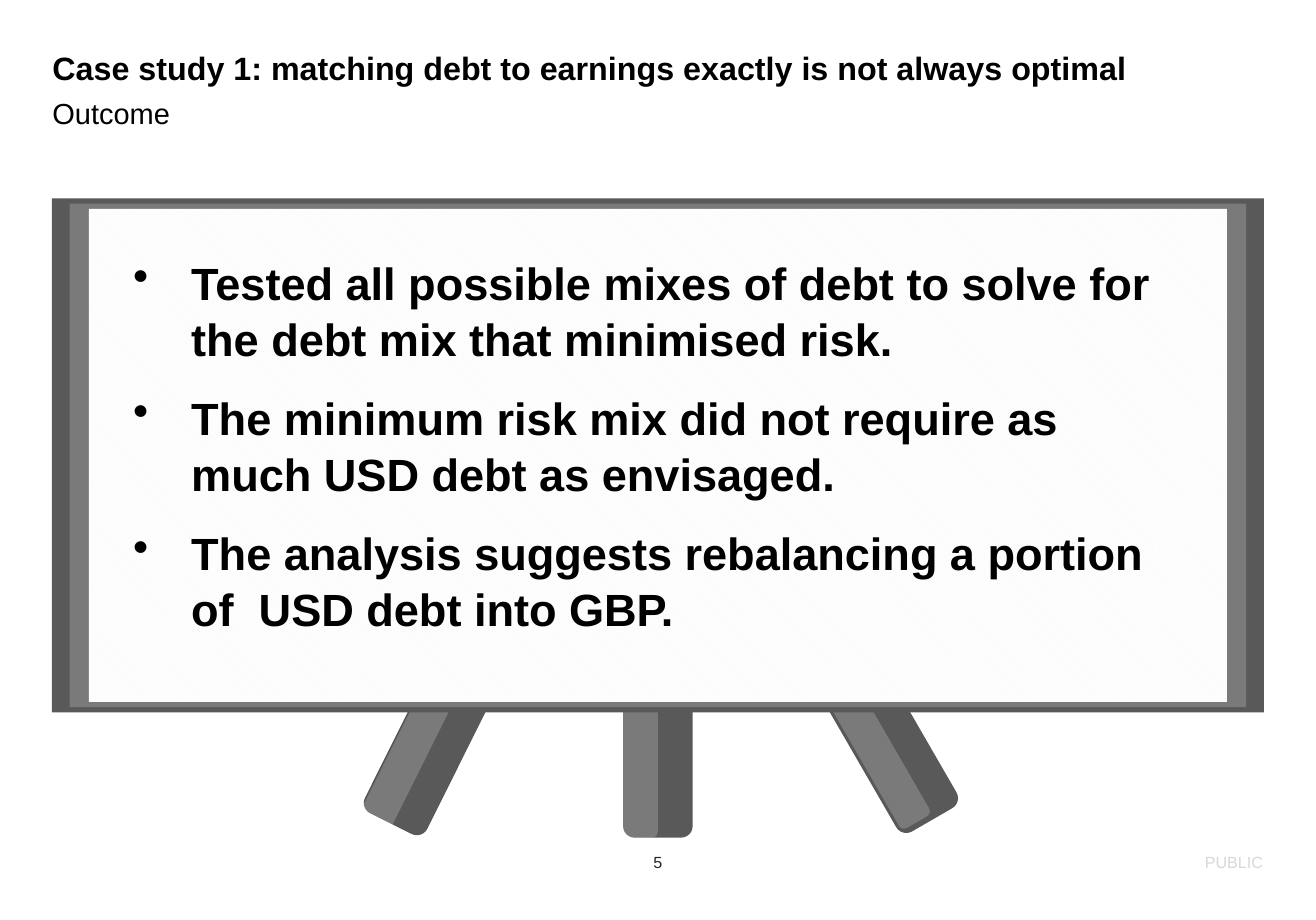
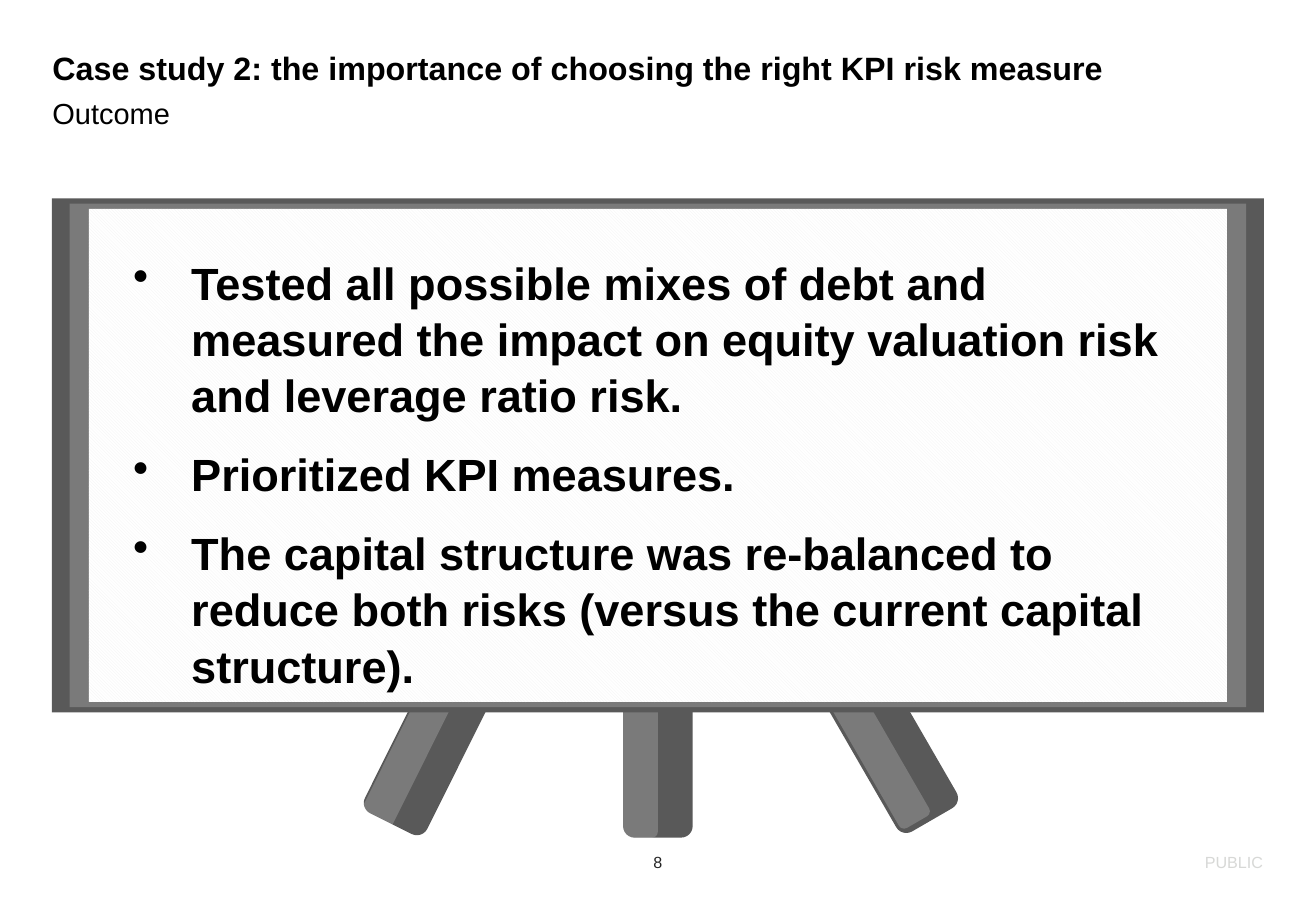
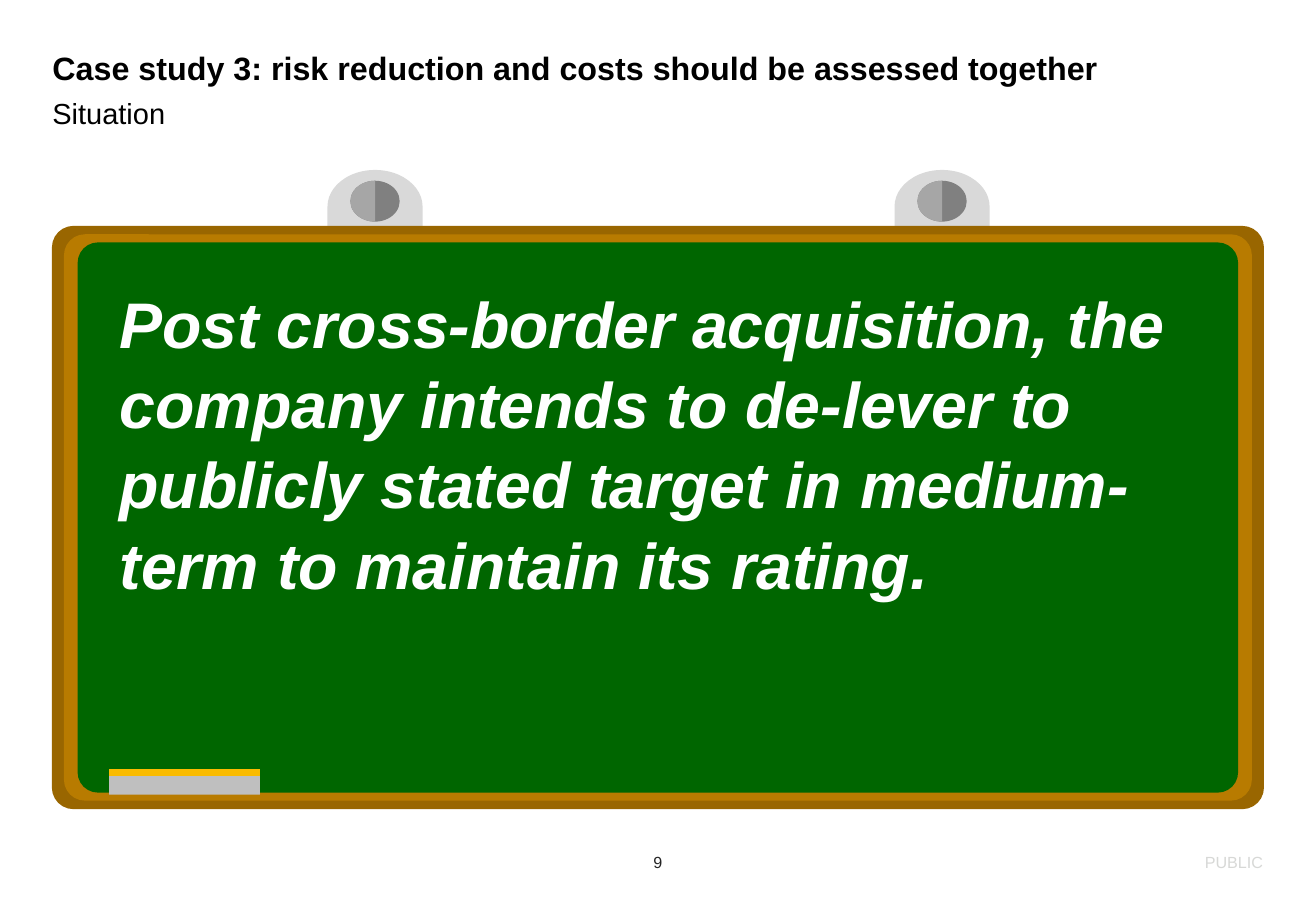
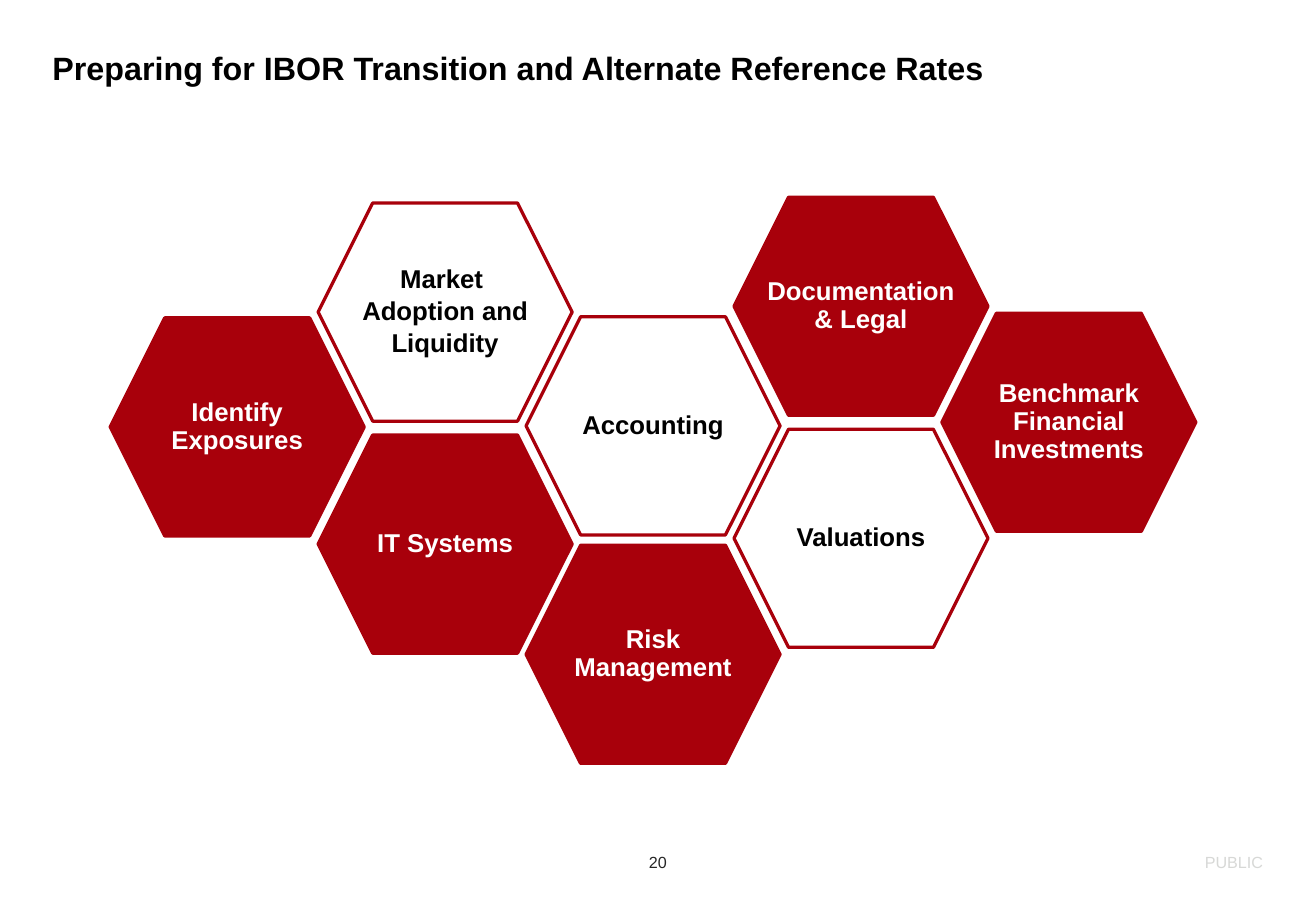
"""Build four treasury case study slides: two easels, a chalkboard and a honeycomb."""
from dataclasses import dataclass

import lxml.etree
import pptx
import pptx.dml.color
import pptx.enum.dml
import pptx.enum.shapes
import pptx.enum.text
import pptx.oxml.ns
import pptx.presentation
import pptx.shapes.autoshape
import pptx.slide
import pptx.text.text
import pptx.util

Pt = pptx.util.Pt
Kind = pptx.enum.shapes.MSO_SHAPE
Align = pptx.enum.text.PP_ALIGN
Anchor = pptx.enum.text.MSO_ANCHOR


@dataclass(frozen=True)
class Theme:
    font: str = "Arial"
    black: str = "000000"
    white: str = "FFFFFF"
    page_number: str = "252525"
    label: str = "D7D8D6"
    easel_dark: str = "595959"
    easel_light: str = "7A7A7A"
    hatch: str = "F2F2F2"
    clip: str = "D9D9D9"
    hole_dark: str = "808080"
    hole_light: str = "A6A6A6"
    wood_dark: str = "996600"
    wood_light: str = "B87B00"
    chalkboard: str = "006600"
    eraser_top: str = "FABB00"
    eraser: str = "BFBFBF"
    red: str = "A8000B"
    footer_size: float = 10
    hexagon_size: float = 16
    subtitle_size: float = 18
    title_size: float = 20
    bullet_size: float = 28
    chalk_size: float = 40
    tight: float = 0.9
    loose: float = 1.04


THEME = Theme()


@dataclass(frozen=True)
class Frame:
    left: float
    top: float
    width: float
    height: float


@dataclass(frozen=True)
class Style:
    size: float
    colour: str = THEME.black
    bold: bool = False
    italic: bool = False
    align: Align = Align.LEFT
    spacing: float = 1.0
    before: float = 0


@dataclass(frozen=True)
class Leg:
    centre: float
    turn: float
    shine_x: float
    shine_y: float


@dataclass(frozen=True)
class Hexagon:
    lines: tuple[str, ...]
    column: int
    top: float
    filled: bool
    wraps: bool = True


TITLE = Style(THEME.title_size, bold=True, spacing=THEME.tight)
SUBTITLE = Style(THEME.subtitle_size, spacing=THEME.loose, before=2)
NUMBER = Style(THEME.footer_size, THEME.page_number, align=Align.CENTER)
LABEL = Style(THEME.footer_size, THEME.label, align=Align.RIGHT)
BULLET = Style(THEME.bullet_size, bold=True, spacing=THEME.loose, before=14)
CHALK = Style(THEME.chalk_size, THEME.white, True, True, spacing=THEME.loose)

MIDDLE_X = 408.2
LEGS = (
    Leg(279.4, 26.5, -10.1, -1.4),
    Leg(537.1, -30, -9.4, 1.4),
    Leg(MIDDLE_X, 0, -10.8, 0),
)
HEXAGONS = (
    Hexagon(("Identify Exposures",), 0, 197.3, True),
    Hexagon(("Market ", "Adoption and Liquidity"), 1, 126, False),
    Hexagon(("Valuations",), 3, 266.4, False),
    Hexagon(("IT Systems",), 1, 270, True),
    Hexagon(("Benchmark Financial Investments",), 4, 194.4, True),
    Hexagon(("Accounting",), 2, 196.6, False),
    Hexagon(("Risk Management",), 2, 338.4, True),
    Hexagon(("Documentation\v& Legal",), 3, 122.4, True, wraps=False),
)


def rgb(colour: str) -> pptx.dml.color.RGBColor:
    """Turn a hex string into a colour."""
    return pptx.dml.color.RGBColor.from_string(colour)


def centred(x: float, y: float, width: float, height: float) -> Frame:
    """Give the frame of this size around a centre."""
    return Frame(x - width / 2, y - height / 2, width, height)


def place(box: pptx.shapes.autoshape.Shape, frame: Frame) -> None:
    """Move and size a box."""
    box.left, box.top = Pt(frame.left), Pt(frame.top)
    box.width, box.height = Pt(frame.width), Pt(frame.height)


def set_margins(box: pptx.shapes.autoshape.Shape, margin: float) -> None:
    """Give all four sides of a box the same inner margin."""
    text = box.text_frame
    text.margin_left = text.margin_right = Pt(margin)
    text.margin_top = text.margin_bottom = Pt(margin)


def write(para: pptx.text.text._Paragraph, words: str, style: Style) -> None:
    """Add words to a paragraph, one run per line."""
    para.alignment = style.align
    para.line_spacing = style.spacing
    para.space_before = Pt(style.before)
    for index, line in enumerate(words.split("\v")):
        if index:
            para.add_line_break()
        span = para.add_run()
        span.text = line
        span.font.name = THEME.font
        span.font.size = Pt(style.size)
        span.font.bold = style.bold
        span.font.italic = style.italic
        span.font.color.rgb = rgb(style.colour)


def add_text(page: pptx.slide.Slide, frame: Frame, words: str, style: Style,
             anchor: Anchor = Anchor.TOP) -> None:
    """Add a text box without margins that holds one paragraph."""
    box = page.shapes.add_textbox(0, 0, 0, 0)
    place(box, frame)
    set_margins(box, 0)
    box.text_frame.word_wrap = True
    box.text_frame.vertical_anchor = anchor
    write(box.text_frame.paragraphs[0], words, style)


def add_shape(page: pptx.slide.Slide, kind: Kind, frame: Frame, colour: str,
              turn: float = 0) -> pptx.shapes.autoshape.Shape:
    """Add a flat shape in one colour without an outline."""
    box = page.shapes.add_shape(kind, 0, 0, 0, 0)
    place(box, frame)
    box.rotation = turn
    box.shadow.inherit = False
    box.fill.solid()
    box.fill.fore_color.rgb = rgb(colour)
    box.line.fill.background()
    return box


def set_opacity(box: pptx.shapes.autoshape.Shape, percent: int) -> None:
    """Make the solid fill of a shape see-through."""
    qn = pptx.oxml.ns.qn
    colour = box.fill._xPr.find(qn("a:solidFill")).find(qn("a:srgbClr"))
    lxml.etree.SubElement(colour, qn("a:alpha")).set("val", str(percent * 1000))


def add_bullet(para: pptx.text.text._Paragraph, indent: float) -> None:
    """Give a paragraph a round bullet and a hanging indent."""
    properties = para._p.get_or_add_pPr()
    properties.set("marL", str(Pt(indent)))
    properties.set("indent", str(-Pt(indent)))
    bullet = lxml.etree.SubElement(properties, pptx.oxml.ns.qn("a:buChar"))
    bullet.set("char", "•")


def add_page(deck: pptx.presentation.Presentation, number: int, title: str,
             subtitle: str = "") -> pptx.slide.Slide:
    """Add a slide with its title, subtitle, page number and label."""
    page = deck.slides.add_slide(deck.slide_layouts.get_by_name("Title Only"))
    box = page.shapes.title
    place(box, Frame(32.5, 32.4, 751, 19.5))
    set_margins(box, 0)
    box.text_frame.word_wrap = True
    box.text_frame.auto_size = pptx.enum.text.MSO_AUTO_SIZE.NONE
    box.text_frame.vertical_anchor = Anchor.TOP
    write(box.text_frame.paragraphs[0], title, TITLE)
    if subtitle:
        add_text(page, Frame(32.5, 58.3, 751, 21.6), subtitle, SUBTITLE)
    add_text(page, Frame(393.2, 528.5, 30, 13.7), str(number), NUMBER, Anchor.MIDDLE)
    add_text(page, Frame(601.5, 528.5, 182, 13.7), "PUBLIC", LABEL, Anchor.MIDDLE)
    return page


def draw_easel(page: pptx.slide.Slide, bullets: tuple[str, ...]) -> None:
    """Draw a framed board on three legs with a bullet list on it."""
    leg_y = 437.4
    for leg in LEGS:
        add_shape(page, Kind.ROUNDED_RECTANGLE, centred(leg.centre, leg_y, 43.2, 165),
                  THEME.easel_dark, leg.turn)
        shine = centred(leg.centre + leg.shine_x, leg_y + leg.shine_y, 21.6, 165)
        set_opacity(add_shape(page, Kind.ROUNDED_RECTANGLE, shine, THEME.white, leg.turn), 20)
    for width, height, colour in ((752, 319, THEME.easel_dark),
                                  (730, 312.5, THEME.easel_light),
                                  (706, 306, THEME.white)):
        board = add_shape(page, Kind.RECTANGLE, centred(MIDDLE_X, 282.7, width, height), colour)
    board.fill.patterned()
    board.fill.pattern = pptx.enum.dml.MSO_PATTERN.LIGHT_DOWNWARD_DIAGONAL
    board.fill.fore_color.rgb = rgb(THEME.hatch)
    board.fill.back_color.rgb = rgb(THEME.white)
    box = page.shapes.add_textbox(Pt(75.6), Pt(153.4), Pt(662.4), Pt(280))
    box.text_frame.word_wrap = True
    for index, words in enumerate(bullets):
        para = box.text_frame.add_paragraph() if index else box.text_frame.paragraphs[0]
        write(para, words, BULLET)
        add_bullet(para, 36)


def draw_chalkboard(page: pptx.slide.Slide, words: str) -> None:
    """Draw a hanging chalkboard with an eraser and one sentence on it."""
    for x in (232.7, 584.5):
        add_shape(page, Kind.FLOWCHART_DELAY, centred(x, 128.2, 45.4, 59), THEME.clip, 270)
        hole = centred(x, 124.9, 30.6, 25.4)
        add_shape(page, Kind.OVAL, hole, THEME.hole_dark)
        half = add_shape(page, Kind.CHORD, hole, THEME.hole_light)
        half.adjustments[0], half.adjustments[1] = 54, 162
    for width, height, colour in ((752, 362, THEME.wood_dark),
                                  (737, 351.5, THEME.wood_light),
                                  (720, 341.5, THEME.chalkboard)):
        board = add_shape(page, Kind.ROUNDED_RECTANGLE,
                          centred(MIDDLE_X, 321.2, width, height), colour)
        board.adjustments[0] = 0.037
    add_shape(page, Kind.RECTANGLE, Frame(67.7, 477.4, 93.6, 4.3), THEME.eraser_top)
    add_shape(page, Kind.RECTANGLE, Frame(67.7, 481.7, 93.6, 11.5), THEME.eraser)
    add_text(page, Frame(74.2, 174.2, 666, 194), words, CHALK)


def draw_hexagon(page: pptx.slide.Slide, item: Hexagon) -> None:
    """Draw one labelled cell of the honeycomb."""
    frame = Frame(68.4 + 129 * item.column, item.top, 157.6, 135.4)
    box = add_shape(page, Kind.HEXAGON, frame, THEME.red if item.filled else THEME.white)
    box.line.color.rgb = rgb(THEME.red)
    box.line.width = Pt(2)
    set_margins(box, 2)
    box.text_frame.word_wrap = item.wraps
    box.text_frame.vertical_anchor = Anchor.MIDDLE
    for index, words in enumerate(item.lines):
        para = box.text_frame.add_paragraph() if index else box.text_frame.paragraphs[0]
        write(para, words, Style(THEME.hexagon_size,
                                 THEME.white if item.filled else THEME.black, True,
                                 align=Align.CENTER,
                                 spacing=THEME.loose if index else THEME.tight))


def main() -> None:
    """Build and save the deck."""
    deck = pptx.Presentation()
    deck.slide_width, deck.slide_height = Pt(816.5), Pt(571)
    draw_easel(
        add_page(deck, 5, "Case study 1: matching debt to earnings exactly is not always optimal",
                 "Outcome"),
        ("Tested all possible mixes of debt to solve for the debt mix that minimised risk.",
         "The minimum risk mix did not require as much USD debt as envisaged.",
         "The analysis suggests rebalancing a portion of  USD debt into GBP."))
    draw_easel(
        add_page(deck, 8, "Case study 2: the importance of choosing the right KPI risk measure",
                 "Outcome"),
        ("Tested all possible mixes of debt and measured the impact on equity valuation risk "
         "and leverage ratio risk.",
         "Prioritized KPI measures.",
         "The capital structure was re-balanced to reduce both risks "
         "(versus the current capital structure)."))
    draw_chalkboard(
        add_page(deck, 9, "Case study 3: risk reduction and costs should be assessed together",
                 "Situation"),
        "Post cross-border acquisition, the company intends to de-lever to publicly stated "
        "target in medium-term to maintain its rating.")
    page = add_page(deck, 20, "Preparing for IBOR Transition and Alternate Reference Rates")
    for item in HEXAGONS:
        draw_hexagon(page, item)
    deck.save("out.pptx")


if __name__ == "__main__":
    main()
